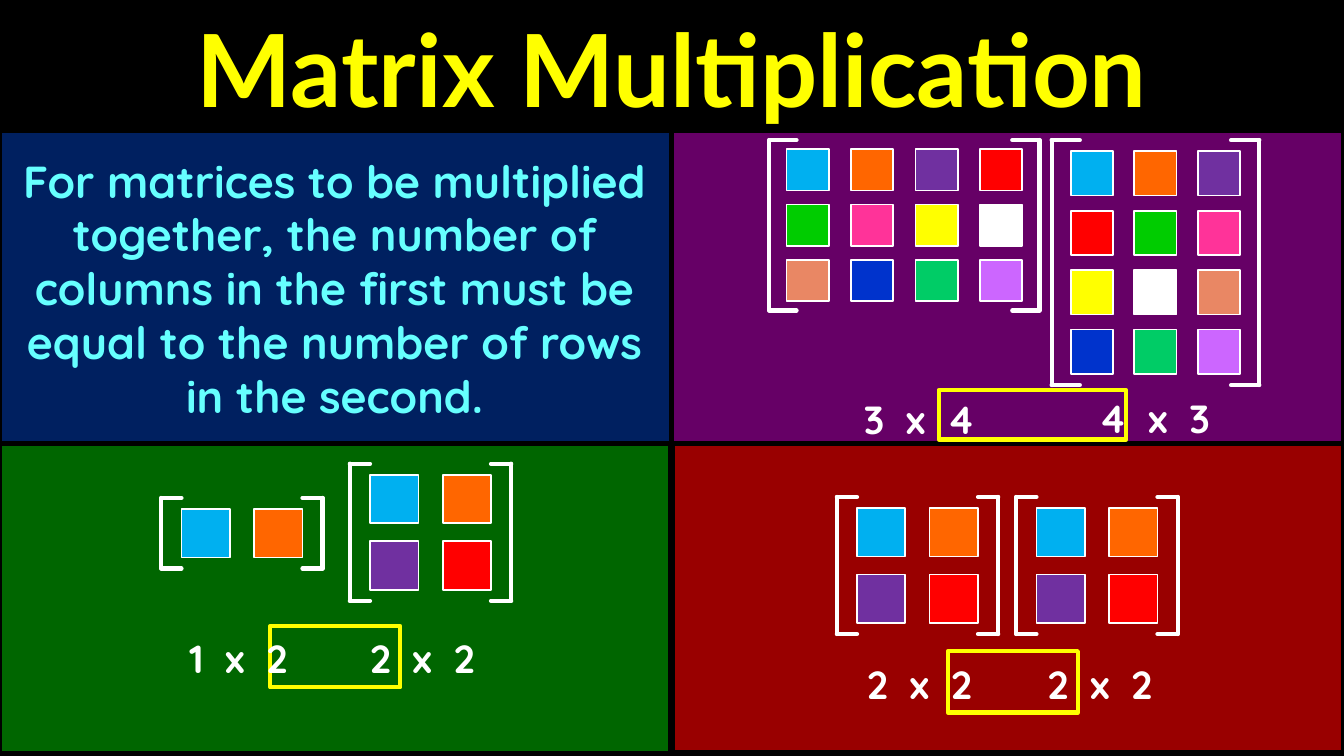
import pptx
import pptx.dml.color
import pptx.enum.shapes
import pptx.enum.text
import pptx.oxml
import pptx.oxml.ns
import pptx.util
from pptx.util import Inches

COLORS = {
    "black": "000000", "white": "FFFFFF", "yellow": "FFFF00", "cyan": "66FFFF",
    "navy": "002060", "plum": "660066", "forest": "006600", "maroon": "990000",
    "sky": "00B0F0", "orange": "FF6600", "purple": "7030A0", "red": "FF0000",
    "green": "00CC00", "pink": "FF3399", "tan": "E98764", "blue": "0033CC",
    "emerald": "00CC66", "violet": "CC66FF",
}
TITLE = "Matrix Multiplication"
RULE = ("For matrices to be multiplied together, the number of columns in the first "
        "must be equal to the number of rows in the second.")
TITLE_BOX = (0, 0.02, 13.33, 1.31)
RULE_BOX = (0, 1.47, 6.64, 2.79)
TITLE_FONT = {"name": "Lato", "size": pptx.util.Pt(72), "bold": True}
RULE_FONT = {"name": "Quicksand", "size": pptx.util.Pt(32), "bold": True}
SIZE_FONT = {"name": "Quicksand", "size": pptx.util.Pt(28), "bold": True}

PANELS = [
    ("maroon", (6.67, 4.39, 6.65, 3.07)),
    ("forest", (0, 4.4, 6.65, 3.07)),
    ("navy", (0, 1.3, 6.66, 3.1)),
    ("plum", (6.66, 1.3, 6.66, 3.1)),
]
# Every matrix takes its cells, row by row, from the start of this sequence.
CELL_COLORS = ["sky", "orange", "purple", "red", "green", "pink",
               "yellow", "white", "tan", "blue", "emerald", "violet"]
# Cell size, distance between cells, gap from bracket to cells, bracket arm
LARGE = {"cell": (0.48, 0.48), "pitch": (0.72, 0.66), "inset": (0.2, 0.11), "arm": 0.2}
WIDE = {"cell": (0.42, 0.41), "pitch": (0.64, 0.55), "inset": (0.17, 0.09), "arm": 0.27}
TALL = {"cell": (0.42, 0.44), "pitch": (0.63, 0.59), "inset": (0.19, 0.11), "arm": 0.28}
# Left, top, rows, columns, style
MATRICES = [
    (1.6, 4.94, 1, 2, LARGE),
    (3.47, 4.6, 2, 2, LARGE),
    (7.63, 1.39, 3, 4, WIDE),
    (10.43, 1.39, 4, 3, TALL),
    (8.3, 4.93, 2, 2, LARGE),
    (10.08, 4.93, 2, 2, LARGE),
]
MATCH_FRAMES = [(2.68, 6.21, 1.29, 0.61), (9.31, 3.87, 1.86, 0.49), (9.4, 6.46, 1.29, 0.61)]
SIZE_LABELS = [
    ("1  x  2", 1.78, 6.21), ("2  x  2", 3.57, 6.21),
    ("3  x  4", 8.47, 3.84), ("4  x  3", 10.8, 3.83),
    ("2  x  2", 8.5, 6.47), ("2  x  2", 10.29, 6.47),
]


def rgb(name):
    return pptx.dml.color.RGBColor.from_string(COLORS[name])


def add_rectangle(shapes, box, fill, line, width):
    shape = shapes.add_shape(pptx.enum.shapes.MSO_SHAPE.RECTANGLE, *map(Inches, box))
    shape.shadow.inherit = False
    if fill:
        shape.fill.solid()
        shape.fill.fore_color.rgb = rgb(fill)
    else:
        shape.fill.background()
    shape.line.color.rgb = rgb(line)
    shape.line.width = pptx.util.Pt(width)


def add_line(shapes, start, end):
    connector = shapes.add_connector(pptx.enum.shapes.MSO_CONNECTOR.STRAIGHT,
                                     *map(Inches, start + end))
    connector.line.color.rgb = rgb("white")
    connector.line.width = pptx.util.Pt(3)
    properties = connector.element.spPr
    properties.find(pptx.oxml.ns.qn("a:ln")).set("cap", "rnd")
    properties.append(pptx.oxml.parse_xml(
        f'<a:effectLst {pptx.oxml.ns.nsdecls("a")}/>'))


def add_matrix(slide, left, top, rows, columns, style):
    """Draw a grid of coloured cells between two square brackets."""
    shapes = slide.shapes.add_group_shape().shapes
    (cell_width, cell_height), (step_x, step_y) = style["cell"], style["pitch"]
    inset_x, inset_y = style["inset"]
    right = left + 2 * inset_x + (columns - 1) * step_x + cell_width
    bottom = top + 2 * inset_y + (rows - 1) * step_y + cell_height
    for x, arm in ((left, style["arm"]), (right, -style["arm"])):
        add_line(shapes, (x, top), (x + arm, top))
        add_line(shapes, (x, bottom), (x + arm, bottom))
        add_line(shapes, (x, bottom), (x, top))
    for index, color in enumerate(CELL_COLORS[:rows * columns]):
        row, column = divmod(index, columns)
        box = (left + inset_x + column * step_x, top + inset_y + row * step_y,
               cell_width, cell_height)
        add_rectangle(shapes, box, color, "white", 1.25)


def set_text(shape, text, font, color, paragraph_format, wrap=True):
    frame = shape.text_frame
    frame.text = text
    frame.word_wrap = wrap
    frame.vertical_anchor = pptx.enum.text.MSO_ANCHOR.TOP
    frame.auto_size = pptx.enum.text.MSO_AUTO_SIZE.SHAPE_TO_FIT_TEXT
    paragraph = frame.paragraphs[0]
    for name, value in paragraph_format.items():
        setattr(paragraph, name, value)
    run = paragraph.runs[0]
    for name, value in font.items():
        setattr(run.font, name, value)
    run.font.color.rgb = rgb(color)
    return paragraph


def fill_placeholder(shape, box, text, font, color):
    """Place and format a placeholder, and bring it to the front."""
    shape.left, shape.top, shape.width, shape.height = map(Inches, box)
    shape.element.getparent().append(shape.element)
    centered = {"alignment": pptx.enum.text.PP_ALIGN.CENTER, "line_spacing": 1.0,
                "space_before": pptx.util.Pt(0)}
    return set_text(shape, text, font, color, centered)


def main():
    presentation = pptx.Presentation()
    presentation.slide_width = Inches(13.33)
    presentation.slide_height = Inches(7.5)
    slide = presentation.slides.add_slide(presentation.slide_layouts[1])
    slide.background.fill.solid()
    slide.background.fill.fore_color.rgb = rgb("black")

    for color, box in PANELS:
        add_rectangle(slide.shapes, box, color, "black", 3)

    title = fill_placeholder(slide.shapes.title, TITLE_BOX, TITLE, TITLE_FONT, "yellow")
    outline = pptx.oxml.parse_xml(
        f'<a:ln {pptx.oxml.ns.nsdecls("a")} w="{pptx.util.Pt(1.75)}"><a:solidFill>'
        f'<a:srgbClr val="{COLORS["black"]}"/></a:solidFill></a:ln>')
    title.runs[0].font._element.insert(0, outline)

    rule = fill_placeholder(slide.placeholders[1], RULE_BOX, RULE, RULE_FONT, "cyan")
    properties = rule._p.get_or_add_pPr()
    properties.set("marL", "0")
    properties.set("indent", "0")
    properties.append(pptx.oxml.parse_xml(f'<a:buNone {pptx.oxml.ns.nsdecls("a")}/>'))

    for matrix in MATRICES:
        add_matrix(slide, *matrix)
    for box in MATCH_FRAMES:
        add_rectangle(slide.shapes, box, None, "yellow", 3)
    label_format = {"line_spacing": 1.07, "space_after": pptx.util.Pt(8)}
    for text, left, top in SIZE_LABELS:
        label = slide.shapes.add_textbox(*map(Inches, (left, top, 1.3, 0.61)))
        set_text(label, text, SIZE_FONT, "white", label_format, wrap=False)

    presentation.save("out.pptx")


if __name__ == "__main__":
    main()
